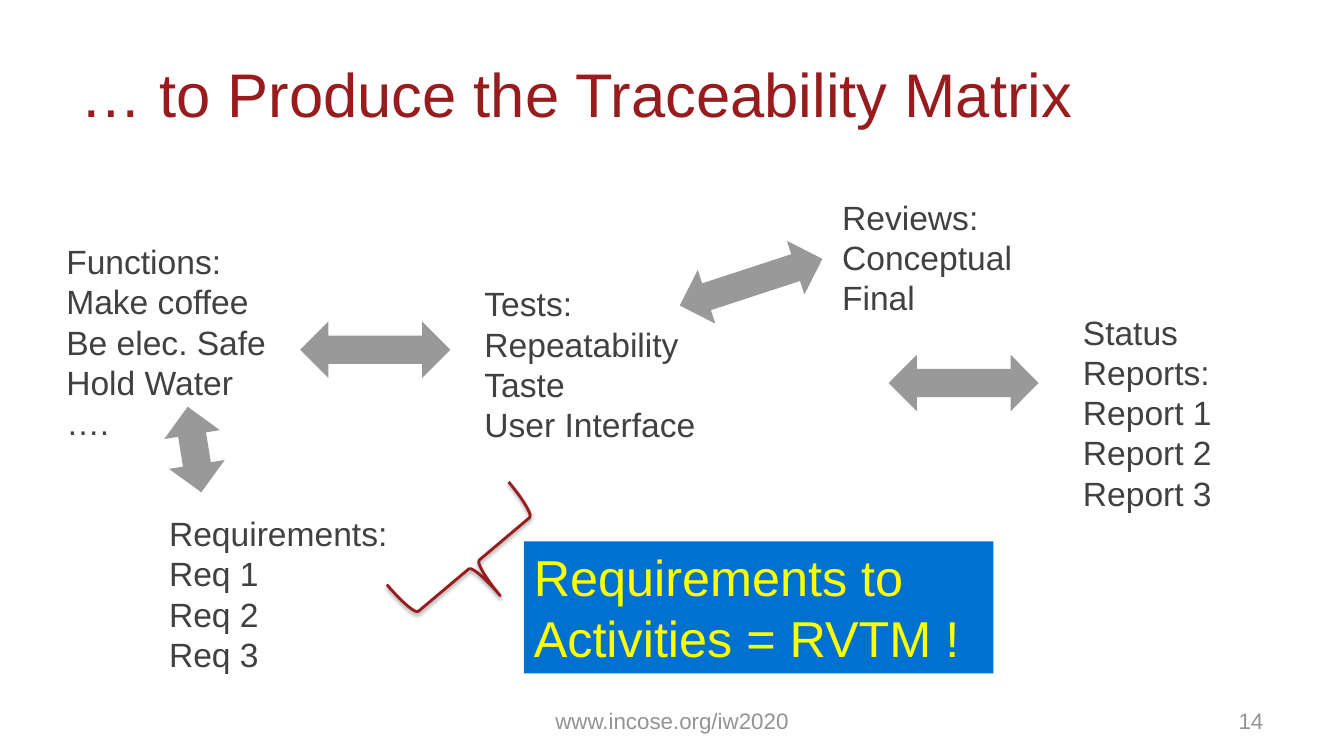
from pptx import Presentation
from pptx.dml.color import RGBColor
from pptx.enum.shapes import MSO_SHAPE
from pptx.enum.text import MSO_ANCHOR, PP_ALIGN
from pptx.oxml import parse_xml
from pptx.util import Inches, Pt

COLORS = {"red": "981B1E", "footer": "939393", "text": "414042",
          "arrow": "999999", "callout": "0071CE", "yellow": "FFFF00"}

TITLE = ("… to Produce the Traceability Matrix", (0.67, 0.3, 12.01, 1.25), 44, "red", PP_ALIGN.LEFT)
FOOTER = ("www.incose.org/iw2020", (4.56, 6.95, 4.22, 0.4), 16, "footer", PP_ALIGN.CENTER)
NUMBER = ("14", (9.56, 6.95, 3.11, 0.4), 16, "footer", PP_ALIGN.RIGHT)

ARTIFACTS = [
    ((0.56, 2.34, 2.3, 2.12), ["Functions:", "Make coffee", "Be elec. Safe", "Hold Water", "…."]),
    ((4.71, 2.76, 2.81, 1.72), ["Tests:", "Repeatability", "Taste", "User Interface"]),
    ((8.26, 1.9, 2.02, 1.31), ["Reviews:", "Conceptual", "Final"]),
    ((10.65, 3.04, 2.02, 2.12), ["Status Reports:", "Report 1", "Report 2", "Report 3"]),
    ((1.58, 5.04, 2.37, 1.72), ["Requirements:", "Req 1", "Req 2", "Req 3"]),
]
ARROWS = [((2.98, 3.19, 1.49, 0.56), 0), ((1.5, 4.18, 0.86, 0.56), 80.9),
          ((6.71, 2.52, 1.49, 0.56), 341.9), ((8.82, 3.52, 1.49, 0.56), 0)]
BRACE = ((4.3, 4.81, 0.81, 1.58), 229.9)
CALLOUT = ((5.2, 5.37, 4.66, 1.31), "Requirements to Activities = RVTM !")
SHADOW = (
    '<a:effectLst xmlns:a="http://schemas.openxmlformats.org/drawingml/2006/main">'
    '<a:outerShdw blurRad="39370" dist="20320" dir="5400000" rotWithShape="0">'
    '<a:srgbClr val="000000"><a:alpha val="38000"/></a:srgbClr>'
    '</a:outerShdw></a:effectLst>')


def rgb(name):
    return RGBColor.from_string(COLORS[name])


def write(sp, lines, size, color, align=PP_ALIGN.LEFT):
    tf = sp.text_frame
    tf.word_wrap = True
    tf.text = "\n".join(lines)
    for p in tf.paragraphs:
        p.alignment = align
        p.font.name, p.font.size = "Arial", Pt(size)
        p.font.color.rgb = rgb(color)
    return tf


def add_text(s, box, lines, size, color, align=PP_ALIGN.LEFT):
    return write(s.shapes.add_textbox(*map(Inches, box)), lines, size, color, align)


def add_shape(s, kind, box, fill=None, rotation=0):
    sp = s.shapes.add_shape(kind, *map(Inches, box))
    sp.shadow.inherit = False
    sp.rotation = rotation
    sp.line.fill.background()
    if fill:
        sp.fill.solid()
        sp.fill.fore_color.rgb = rgb(fill)
    else:
        sp.fill.background()
    return sp


def main():
    """Build the traceability matrix slide."""
    prs = Presentation()
    prs.slide_width, prs.slide_height = Inches(13.34), Inches(7.5)
    s = prs.slides.add_slide(prs.slide_layouts[6])

    for text, box, size, color, align in (TITLE, FOOTER, NUMBER):
        tf = add_text(s, box, [text], size, color, align)
        tf.vertical_anchor = MSO_ANCHOR.MIDDLE
        tf.margin_left = tf.margin_right = Inches(0.13)
        tf.margin_top = tf.margin_bottom = Inches(0.07)

    for box, lines in ARTIFACTS:
        add_text(s, box, lines, 24, "text")

    for box, rotation in ARROWS:
        add_shape(s, MSO_SHAPE.LEFT_RIGHT_ARROW, box, "arrow", rotation)

    box, rotation = BRACE
    brace = add_shape(s, MSO_SHAPE.LEFT_BRACE, box, rotation=rotation)
    brace.line.color.rgb = rgb("red")
    brace.line.width = Pt(2)
    props = brace.element.spPr
    props.remove(props.find("{*}effectLst"))
    props.append(parse_xml(SHADOW))

    box, text = CALLOUT
    callout = add_shape(s, MSO_SHAPE.RECTANGLE, box, "callout")
    write(callout, [text], 36, "yellow").vertical_anchor = MSO_ANCHOR.TOP

    prs.save("out.pptx")


if __name__ == "__main__":
    main()
